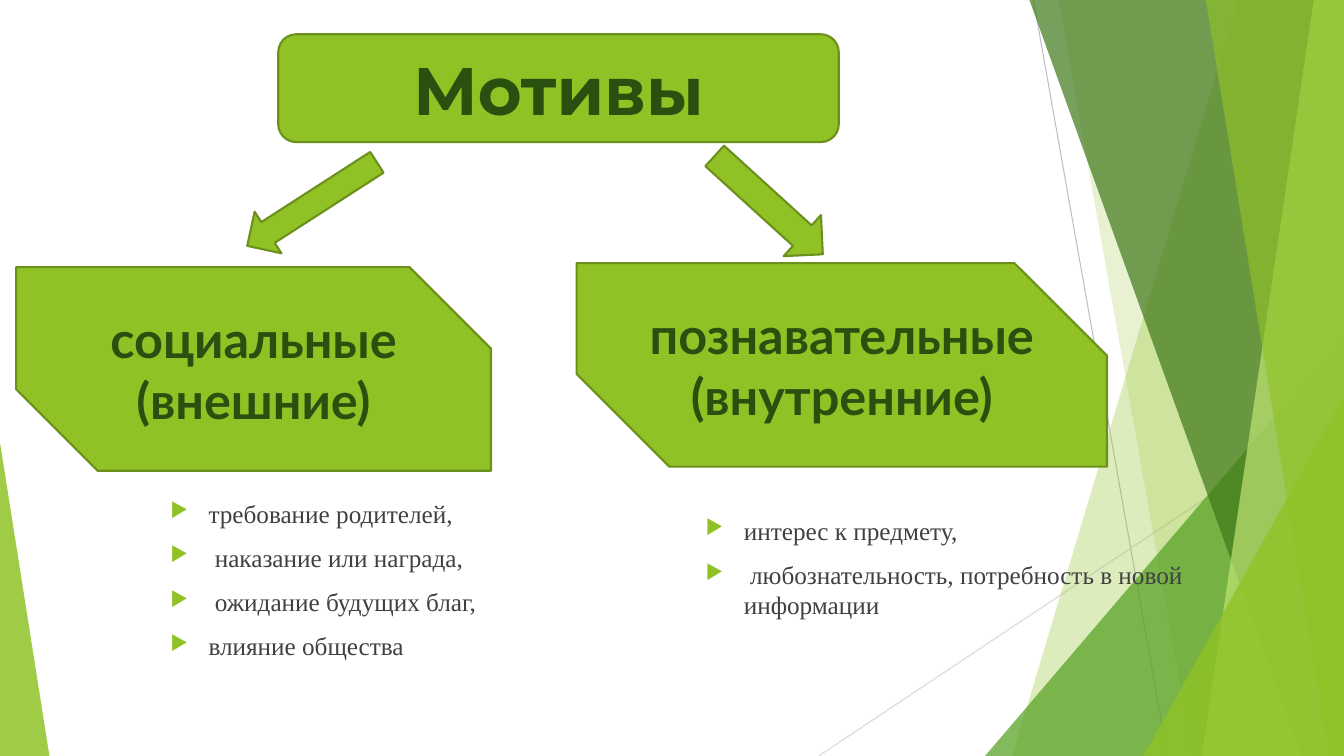
"""Build a slide that sorts motives into social and cognitive ones."""
from lxml import etree
from pptx import Presentation
from pptx.dml.color import RGBColor
from pptx.enum.shapes import MSO_CONNECTOR, MSO_SHAPE
from pptx.enum.text import MSO_ANCHOR, PP_ALIGN
from pptx.oxml.ns import qn
from pptx.util import Inches, Pt

STRAIGHT = MSO_CONNECTOR.STRAIGHT
TRIANGLE = MSO_SHAPE.ISOSCELES_TRIANGLE
ROUNDED = MSO_SHAPE.ROUNDED_RECTANGLE
SNIPPED = MSO_SHAPE.SNIP_2_DIAG_RECTANGLE
DOWN_ARROW = MSO_SHAPE.DOWN_ARROW
CENTER = PP_ALIGN.CENTER
MIDDLE = MSO_ANCHOR.MIDDLE

WIDTH, HEIGHT = 13.33, 7.5
COLORS = {
    "lime": "90C226",
    "pale": "C0E474",
    "green": "54A021",
    "forest": "3F7819",
    "outline": "6B901C",
    "heading": "2A5010",
    "body": "404040",
    "ray": "BFBFBF",
    "faint_ray": "D9D9D9",
}


def rgb(name):
    return RGBColor.from_string(COLORS[name])


def inches(*values):
    return [Inches(value) for value in values]


def paint(shape, color, opacity=100, outline=None):
    shape.shadow.inherit = False
    shape.fill.solid()
    shape.fill.fore_color.rgb = rgb(color)
    if opacity < 100:
        tint = shape.fill._xPr.find(qn("a:solidFill"))[0]
        etree.SubElement(tint, qn("a:alpha"), val=str(opacity * 1000))
    if outline:
        shape.line.color.rgb = rgb(outline)
        shape.line.width = Pt(1.5)
    else:
        shape.line.fill.background()


def add_ray(slide, start, end, color):
    ray = slide.shapes.add_connector(STRAIGHT, *inches(*start, *end))
    ray.line.color.rgb = rgb(color)
    ray.line.width = Pt(0.75)
    etree.SubElement(ray._element.spPr, qn("a:effectLst"))


def add_band(slide, top_x, bottom_x, color, opacity):
    """Fill from a slanted left edge to the right side of the slide."""
    corners = [(WIDTH, 0), (WIDTH, HEIGHT), (bottom_x, HEIGHT)]
    builder = slide.shapes.build_freeform(Inches(top_x), 0, scale=1.0)
    builder.add_line_segments([inches(*corner) for corner in corners], close=True)
    paint(builder.convert_to_shape(), color, opacity)


def add_wedge(slide, box, apex, color, opacity):
    wedge = slide.shapes.add_shape(TRIANGLE, *inches(*box))
    wedge.adjustments[0] = apex
    paint(wedge, color, opacity)


def add_heading(slide, kind, box, text, font_name, size):
    heading = slide.shapes.add_shape(kind, *inches(*box))
    paint(heading, "lime", outline="outline")
    heading.text_frame.vertical_anchor = MIDDLE
    heading.text_frame.word_wrap = True
    paragraph = heading.text_frame.paragraphs[0]
    paragraph.text = text
    paragraph.alignment = CENTER
    style_font(paragraph.font, font_name, size, "heading")
    paragraph.font.bold = True
    return heading


def style_font(font, name, size, color):
    font.name = name
    font.size = Pt(size)
    font.color.rgb = rgb(color)


def add_bullet(paragraph):
    props = paragraph._p.get_or_add_pPr()
    props.set("marL", str(Inches(0.38)))
    props.set("indent", str(-Inches(0.38)))
    bullet_color = etree.SubElement(props, qn("a:buClr"))
    etree.SubElement(bullet_color, qn("a:srgbClr"), val=COLORS["lime"])
    etree.SubElement(props, qn("a:buSzPct"), val="80000")
    etree.SubElement(props, qn("a:buChar"), char="▶")


def add_motive_list(slide, box, motives):
    frame = slide.shapes.add_textbox(*inches(*box)).text_frame
    frame.word_wrap = True
    for index, motive in enumerate(motives):
        paragraph = frame.add_paragraph() if index else frame.paragraphs[0]
        paragraph.text = motive
        add_bullet(paragraph)
        paragraph.space_before = Pt(10)
        style_font(paragraph.font, "Times New Roman", 18, "body")


def add_arrow(slide, box, rotation):
    arrow = slide.shapes.add_shape(DOWN_ARROW, *inches(*box))
    arrow.rotation = rotation
    paint(arrow, "lime", outline="outline")


def add_backdrop(slide):
    add_ray(slide, (10.25, 0), (11.58, HEIGHT), "ray")
    add_ray(slide, (WIDTH, 4.03), (8.12, HEIGHT), "faint_ray")
    add_band(slide, 12.28, 10.04, "lime", 30)
    add_band(slide, 10.5, 11.83, "lime", 20)
    add_wedge(slide, (9.77, 3.33, 3.56, 4.17), 1, "green", 72)
    add_band(slide, 10.21, 12.91, "forest", 70)
    add_band(slide, 13.03, 11.92, "pale", 70)
    add_band(slide, 11.96, 13.18, "lime", 65)
    add_wedge(slide, (11.34, 3.93, 1.99, 3.57), 1, "lime", 80)
    add_wedge(slide, (0, 4.39, 0.49, 3.11), 0, "lime", 85)


def main():
    deck = Presentation()
    deck.slide_width, deck.slide_height = inches(WIDTH, HEIGHT)
    slide = deck.slides.add_slide(deck.slide_layouts[6])
    add_backdrop(slide)

    branches = [
        ((5.72, 2.61, 5.26, 2.02), "познавательные (внутренние)", 0.455),
        ((0.16, 2.65, 4.71, 2.02), "социальные (внешние)", 0.4),
    ]
    for box, text, snip in branches:
        branch = add_heading(slide, SNIPPED, box, text, "Lato", 36)
        branch.adjustments[0] = 0
        branch.adjustments[1] = snip
    add_heading(slide, ROUNDED, (2.76, 0.34, 5.56, 1.07), "Мотивы", "Montserrat", 48)

    add_motive_list(slide, (1.59, 4.89, 4.99, 2.6), [
        "требование родителей,",
        " наказание или награда,",
        " ожидание будущих благ,",
        "влияние общества",
    ])
    add_motive_list(slide, (6.9, 5.06, 5.93, 2.4), [
        "интерес к предмету,",
        " любознательность, потребность в новой информации",
    ])
    add_arrow(slide, (2.85, 1.26, 0.49, 1.53), 57.2)
    add_arrow(slide, (7.35, 1.31, 0.55, 1.45), 312.3)
    deck.save("out.pptx")


if __name__ == "__main__":
    main()
